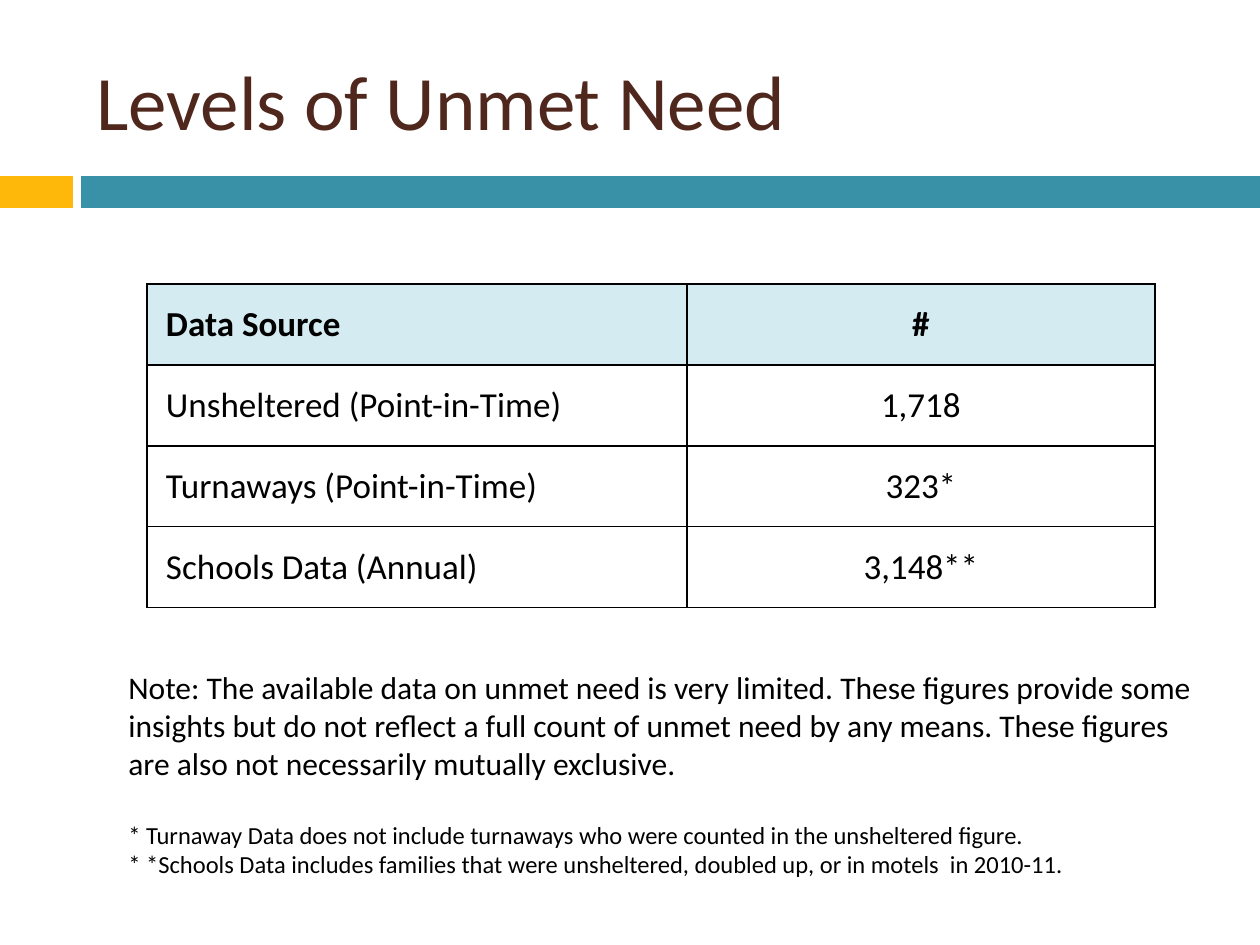
import pptx
import pptx.util
import pptx.dml.color
import pptx.enum.shapes
import pptx.enum.text
import pptx.oxml

RGB = pptx.dml.color.RGBColor
ALIGN = pptx.enum.text.PP_ALIGN
ANCHOR = pptx.enum.text.MSO_ANCHOR
BLACK = RGB(0x00, 0x00, 0x00)
BROWN = RGB(0x4F, 0x27, 0x1C)
GOLD = RGB(0xFE, 0xB8, 0x0A)
TEAL = RGB(0x38, 0x91, 0xA7)
PALE = RGB(0xD4, 0xEB, 0xF1)
FONT = "Calibri"
NS = "http://schemas.openxmlformats.org/drawingml/2006/main"


def px(n):
    return pptx.util.Emu(round(n * 914400 / 126))


class Deck:
    """Hold the style and the current slide, and draw each kind of element."""

    def __init__(self, width, height):
        self.prs = pptx.Presentation()
        self.prs.slide_width, self.prs.slide_height = px(width), px(height)

    def slide(self):
        self.s = self.prs.slides.add_slide(self.prs.slide_layouts[5])

    def style(self, p, text, size, color=BLACK, bold=False, align=ALIGN.LEFT):
        p.text = text
        p.alignment = align
        p.font.name = FONT
        p.font.size = pptx.util.Pt(size)
        p.font.bold = bold
        p.font.color.rgb = color

    def title(self, text, x, y, w, h):
        sp = self.s.shapes.title
        sp.left, sp.top, sp.width, sp.height = px(x), px(y), px(w), px(h)
        sp.text_frame.vertical_anchor = ANCHOR.MIDDLE
        self.style(sp.text_frame.paragraphs[0], text, 44, BROWN)

    def bar(self, x, y, w, h, color):
        rect = pptx.enum.shapes.MSO_SHAPE.RECTANGLE
        sp = self.s.shapes.add_shape(rect, px(x), px(y), px(w), px(h))
        sp.shadow.inherit = False
        sp.fill.solid()
        sp.fill.fore_color.rgb = color
        sp.line.fill.background()

    def border(self, cell):
        tcPr = cell._tc.get_or_add_tcPr()
        for side in "LRTB":
            tcPr.append(pptx.oxml.parse_xml(
                f'<a:ln{side} xmlns:a="{NS}" w="12700"><a:solidFill>'
                f'<a:srgbClr val="{BLACK}"/></a:solidFill></a:ln{side}>'))

    def table(self, rows, x, y, widths, row_height):
        table = self.s.shapes.add_table(
            len(rows), len(widths), px(x), px(y),
            px(sum(widths)), px(row_height * len(rows))).table
        table.first_row = table.horz_banding = False
        for column, width in zip(table.columns, widths):
            column.width = px(width)
        for i, row in enumerate(rows):
            for j, text in enumerate(row):
                cell = table.cell(i, j)
                cell.margin_left = cell.margin_right = px(19)
                cell.margin_top = cell.margin_bottom = px(19)
                self.border(cell)
                if i == 0:
                    cell.fill.solid()
                    cell.fill.fore_color.rgb = PALE
                else:
                    cell.fill.background()
                self.style(cell.text_frame.paragraphs[0], text, 20, bold=i == 0,
                           align=ALIGN.CENTER if j else ALIGN.LEFT)

    def text(self, items, x, y, w, h):
        tf = self.s.shapes.add_textbox(px(x), px(y), px(w), px(h)).text_frame
        tf.word_wrap = True
        for i, (text, size, gap) in enumerate(items):
            p = tf.add_paragraph() if i else tf.paragraphs[0]
            self.style(p, text, size)
            p.space_before = pptx.util.Pt(gap)


def main():
    deck = Deck(1260, 945)
    deck.slide()
    deck.bar(0, 176, 73, 32, GOLD)
    deck.bar(81, 176, 1179, 32, TEAL)
    deck.title("Levels of Unmet Need", 84, 32, 1124, 136)
    deck.table([
        ("Data Source", "#"),
        ("Unsheltered (Point-in-Time)", "1,718"),
        ("Turnaways (Point-in-Time)", "323*"),
        ("Schools Data (Annual)", "3,148**"),
    ], 147, 284, (540, 468), 80)
    deck.text([
        ("Note: The available data on unmet need is very limited. These figures "
         "provide some insights but do not reflect a full count of unmet need by "
         "any means. These figures are also not necessarily mutually exclusive.", 18, 0),
        ("* Turnaway Data does not include turnaways who were counted in the "
         "unsheltered figure.", 14, 22),
        ("* *Schools Data includes families that were unsheltered, doubled up, "
         "or in motels  in 2010-11.", 14, 0),
    ], 116, 662, 1092, 224)
    deck.prs.save("out.pptx")


if __name__ == "__main__":
    main()
